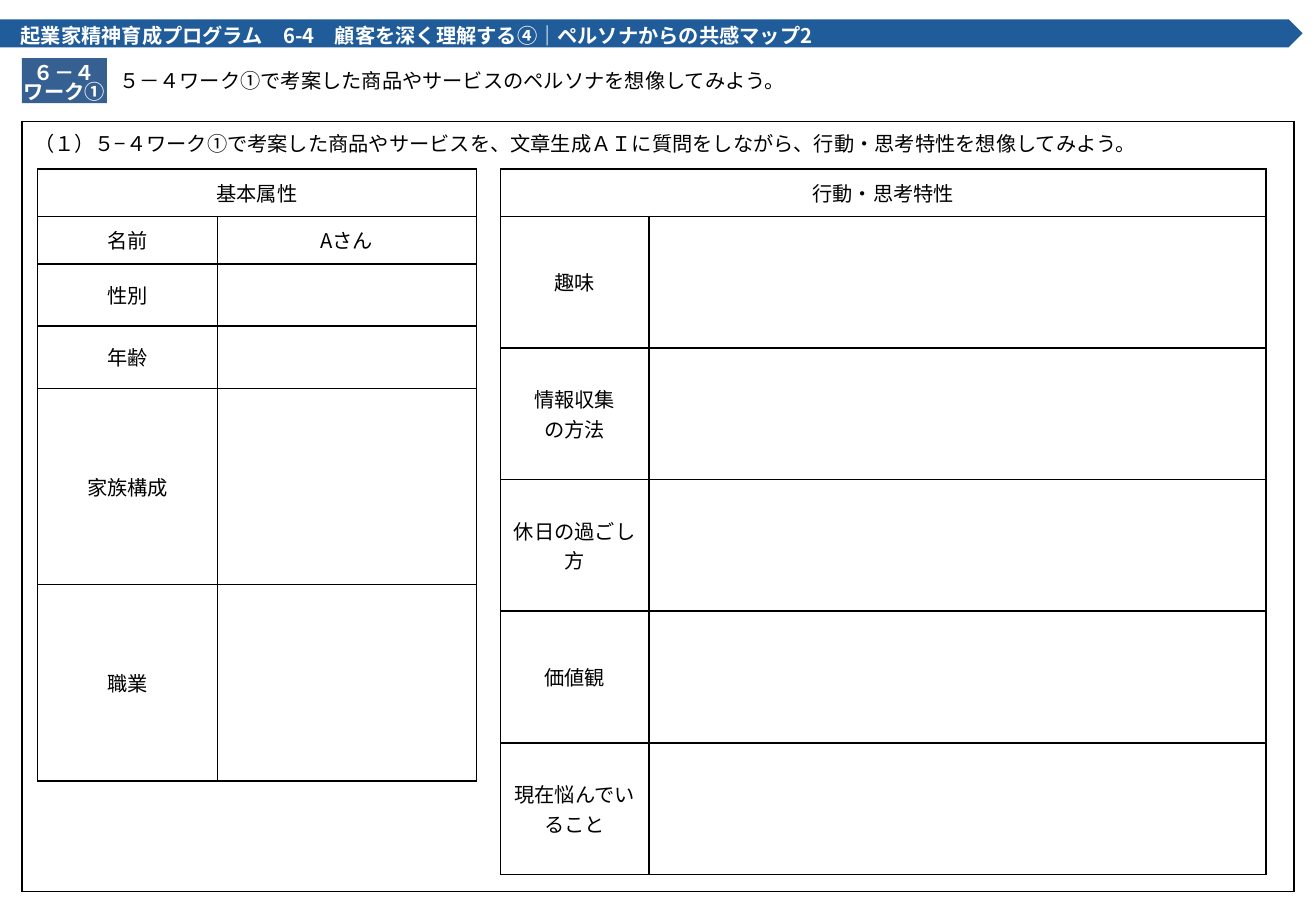
from dataclasses import dataclass

from lxml import etree
from pptx import Presentation
from pptx import util as u
from pptx.dml.color import RGBColor
from pptx.enum import shapes, text
from pptx.oxml import ns

BLACK = RGBColor(0x00, 0x00, 0x00)
WHITE = RGBColor(0xFF, 0xFF, 0xFF)
NAVY = RGBColor(0x36, 0x60, 0x92)
BLUE = RGBColor(0x1F, 0x5C, 0x99)
FONT = "Noto Sans CJK JP"
LEFT, MID = text.PP_ALIGN.LEFT, text.PP_ALIGN.CENTER
TOP, CENTER = text.MSO_ANCHOR.TOP, text.MSO_ANCHOR.MIDDLE


@dataclass
class Box:
    x: float
    y: float
    w: float
    h: float

    def place(self) -> list[int]:
        return [u.Inches(v) for v in (self.x, self.y, self.w, self.h)]


@dataclass
class Grid:
    box: Box
    cols: list[float]
    rows: list[float]
    cells: list[list[str]]
    align: int = MID
    anchor: int = CENTER


@dataclass
class Label:
    kind: int
    box: Box
    fill: RGBColor
    words: str
    align: int
    inset: float = 0
    pitch: float | None = None


GRIDS = [
    Grid(Box(0.18, 1, 10.47, 6.34), [1], [1],
         [["（１）５−４ワーク①で考案した商品やサービスを、文章生成ＡＩに質問をしながら、行動・思考特性を想像してみよう。"]],
         LEFT, TOP),
    Grid(Box(0.31, 1.39, 3.61, 5.04), [1.48, 2.13], [0.39, 0.39, 0.51, 0.51, 1.61, 1.61],
         [["基本属性"], ["名前", "Aさん"], ["性別"], ["年齢"], ["家族構成"], ["職業"]]),
    Grid(Box(4.12, 1.39, 6.3, 5.81), [1.22, 5.08], [0.39] + [1.08] * 5,
         [["行動・思考特性"], ["趣味"], ["情報収集\nの方法"], ["休日の過ごし方"],
          ["価値観"], ["現在悩んでいること"]]),
]

LABELS = [
    Label(shapes.MSO_SHAPE.RECTANGLE, Box(0.18, 0.48, 0.7, 0.37), NAVY,
          "６－４\nワーク①", MID, pitch=11),
    Label(shapes.MSO_SHAPE.PENTAGON, Box(0, 0.16, 10.72, 0.23), BLUE,
          "起業家精神育成プログラム　6-4　顧客を深く理解する④｜ペルソナからの共感マップ2", LEFT, inset=0.17),
]


def write(frame, words: str, color: RGBColor, align: int, bold: bool = False) -> None:
    frame.text = words
    for para in frame.paragraphs:
        para.alignment = align
        for run in para.runs:
            font = run.font
            font.size, font.bold, font.name = u.Pt(12), bold, FONT
            font.color.rgb = color
            etree.SubElement(run._r.get_or_add_rPr(), ns.qn("a:ea"), typeface=FONT)


def border(cell) -> None:
    props = cell._tc.get_or_add_tcPr()
    for side in ("lnL", "lnR", "lnT", "lnB"):
        line = etree.SubElement(props, ns.qn("a:" + side), w=str(u.Pt(1)))
        fill = etree.SubElement(line, ns.qn("a:solidFill"))
        etree.SubElement(fill, ns.qn("a:srgbClr"), val=str(BLACK))


def draw_grid(slide, grid: Grid) -> None:
    table = slide.shapes.add_table(len(grid.rows), len(grid.cols), *grid.box.place()).table
    table.first_row = table.horz_banding = False
    for col, part in zip(table.columns, grid.cols):
        col.width = u.Inches(grid.box.w * part / sum(grid.cols))
    for row, part in zip(table.rows, grid.rows):
        row.height = u.Inches(grid.box.h * part / sum(grid.rows))
    for cell in table.iter_cells():
        border(cell)
        cell.fill.background()
        cell.vertical_anchor = grid.anchor
    if len(grid.cols) > 1:
        table.cell(0, 0).merge(table.cell(0, len(grid.cols) - 1))
    for r, row in enumerate(grid.cells):
        for c, words in enumerate(row):
            write(table.cell(r, c).text_frame, words, BLACK, grid.align)


def draw_label(slide, label: Label) -> None:
    shape = slide.shapes.add_shape(label.kind, *label.box.place())
    shape.shadow.inherit = False
    shape.fill.solid()
    shape.fill.fore_color.rgb = label.fill
    shape.line.fill.background()
    frame = shape.text_frame
    frame.word_wrap = True
    frame.vertical_anchor = text.MSO_ANCHOR.BOTTOM
    frame.margin_left = u.Inches(label.inset)
    frame.margin_top = frame.margin_right = frame.margin_bottom = 0
    write(frame, label.words, WHITE, label.align, bold=True)
    if label.pitch:
        for para in frame.paragraphs:
            para.line_spacing = u.Pt(label.pitch)


def draw_title(slide) -> None:
    title = slide.shapes.title
    title.left, title.top, title.width, title.height = Box(0.88, 0.56, 7.53, 0.23).place()
    frame = title.text_frame
    frame.auto_size = text.MSO_AUTO_SIZE.NONE
    frame.vertical_anchor = CENTER
    write(frame, "５－４ワーク①で考案した商品やサービスのペルソナを想像してみよう。", BLACK, LEFT)
    frame.paragraphs[0].line_spacing = 0.9


def main() -> None:
    deck = Presentation()
    deck.slide_width, deck.slide_height = u.Inches(10.83), u.Inches(7.5)
    slide = deck.slides.add_slide(deck.slide_layouts[5])
    draw_title(slide)
    for grid in GRIDS:
        draw_grid(slide, grid)
    for label in LABELS:
        draw_label(slide, label)
    deck.save("out.pptx")


if __name__ == "__main__":
    main()
